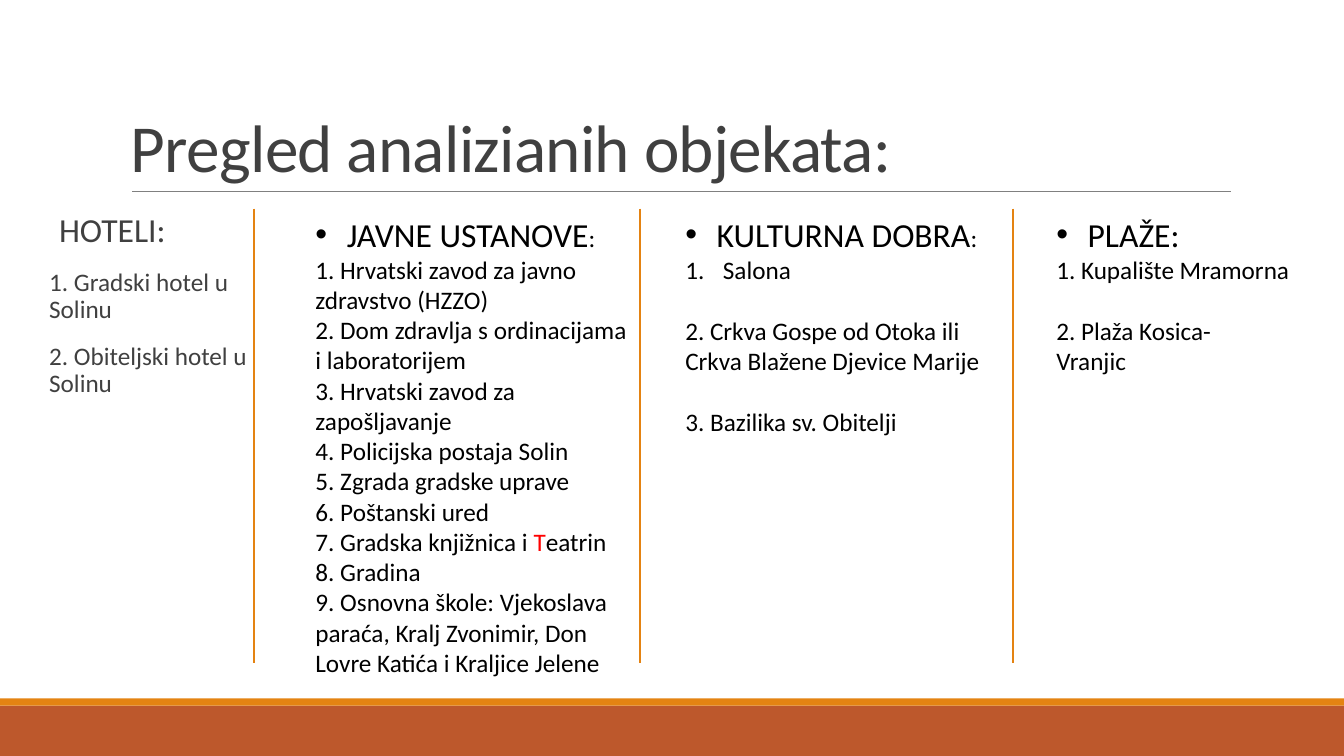
from lxml import etree
from pptx import Presentation
from pptx import util as u
from pptx.dml.color import RGBColor
from pptx.enum import shapes, text
from pptx.oxml.ns import qn

COLORS = {
    "title": "404040",
    "body": "000000",
    "accent": "E48312",
    "footer": "BD582C",
    "rule": "808080",
    "highlight": "FF0000",
}
FONT = "Calibri"
COLUMN_TOP = 5.26
LINE_GAP = 22
BULLET = {"bullet": "•", "indent": 0.79}

PUBLIC_INSTITUTIONS = [
    "1. Hrvatski zavod za javno zdravstvo (HZZO)",
    "2. Dom zdravlja s ordinacijama i laboratorijem",
    "3. Hrvatski zavod za zapošljavanje",
    "4. Policijska postaja Solin",
    "5. Zgrada gradske uprave",
    "6. Poštanski ured",
    [("7. Gradska knjižnica i ", {}), ("T", {"color": "highlight"}), ("eatrin", {})],
    "8. Gradina",
    "9. Osnovna škole: Vjekoslava paraća, Kralj Zvonimir, Don Lovre Katića i Kraljice Jelene",
]


def rgb(name):
    return RGBColor.from_string(COLORS[name])


def add_bar(slide, top, height, color):
    shape = slide.shapes.add_shape(
        shapes.MSO_SHAPE.RECTANGLE, 0, u.Cm(top), u.Cm(33.87), u.Cm(height))
    shape.shadow.inherit = False
    shape.fill.solid()
    shape.fill.fore_color.rgb = rgb(color)
    shape.line.fill.background()


def add_line(slide, x1, y1, x2, y2, color, width):
    line = slide.shapes.add_connector(
        shapes.MSO_CONNECTOR.STRAIGHT, u.Cm(x1), u.Cm(y1), u.Cm(x2), u.Cm(y2))
    line.line.color.rgb = rgb(color)
    line.line.width = u.Pt(width)
    etree.SubElement(line._element.spPr, qn("a:effectLst"))


def add_text_box(slide, left, top, width, height, inset=0.25, anchor="TOP"):
    """Add an empty wrapping box and return its text frame."""
    box = slide.shapes.add_textbox(u.Cm(left), u.Cm(top), u.Cm(width), u.Cm(height))
    frame = box.text_frame
    frame.word_wrap = True
    frame.margin_left = frame.margin_right = u.Cm(inset)
    frame.vertical_anchor = text.MSO_ANCHOR[anchor]
    return frame


def set_bullet(paragraph, bullet, indent):
    """Hang a character bullet, or automatic numbers if bullet is 'number'."""
    properties = paragraph._p.get_or_add_pPr()
    properties.set("marL", str(u.Cm(indent)))
    properties.set("indent", str(-u.Cm(indent)))
    if bullet == "number":
        etree.SubElement(properties, qn("a:buFont"), typeface="+mj-lt")
        etree.SubElement(properties, qn("a:buAutoNum"), type="arabicPeriod")
    else:
        etree.SubElement(properties, qn("a:buFont"), typeface="Arial")
        etree.SubElement(properties, qn("a:buChar"), char=bullet)


def add_run(paragraph, content, size=18, color="body", tracking=None):
    run = paragraph.add_run()
    run.text = content
    run.font.name = FONT
    run.font.size = u.Pt(size)
    run.font.color.rgb = rgb(color)
    if tracking is not None:
        run._r.get_or_add_rPr().set("spc", str(tracking))


def add_text(frame, content, line_spacing=1.0, before=0, after=0,
             bullet=None, indent=0, **run_format):
    """Add a paragraph from a string or from (string, format) runs."""
    first = frame.paragraphs[0]
    paragraph = frame.add_paragraph() if first.runs else first
    paragraph.line_spacing = line_spacing
    paragraph.space_before = u.Pt(before)
    paragraph.space_after = u.Pt(after)
    if bullet:
        set_bullet(paragraph, bullet, indent)
    elif indent:
        paragraph._p.get_or_add_pPr().set("marL", str(u.Cm(indent)))
    runs = [(content, {})] if isinstance(content, str) else content
    for part, part_format in runs:
        for number, row in enumerate(part.split("\n")):
            if number:
                paragraph.add_line_break()
            add_run(paragraph, row, **{**run_format, **part_format})


def add_hotels(slide):
    frame = add_text_box(slide, 1.24, COLUMN_TOP, 5.13, 12.09, inset=0)
    style = {"line_spacing": 0.9, "after": 2, "color": "title"}
    add_text(frame, "HOTELI:", size=24, indent=0.25, **style)
    for hotel in ("1. Gradski hotel u Solinu", "2. Obiteljski hotel u Solinu"):
        add_text(frame, hotel, before=12, **style)


def add_column(slide, left, width, height, heading):
    """Add a column with a bulleted heading and return its text frame."""
    frame = add_text_box(slide, left, COLUMN_TOP, width, height)
    add_text(frame, heading, size=24, **BULLET)
    return frame


def main():
    presentation = Presentation()
    presentation.slide_width, presentation.slide_height = u.Cm(33.87), u.Cm(19.05)
    slide = presentation.slides.add_slide(presentation.slide_layouts[6])

    add_bar(slide, 17.78, 1.27, "footer")
    add_bar(slide, 17.6, 0.18, "accent")
    add_line(slide, 3.33, 4.83, 31.01, 4.83, "rule", 0.5)

    title = add_text_box(slide, 3.05, 0.79, 27.94, 4.04, anchor="BOTTOM")
    add_text(title, "Pregled analizianih objekata:", line_spacing=0.85,
             size=48, color="title", tracking=-50)

    add_hotels(slide)

    small_colon = (":", {"size": 18})
    institutions = add_column(slide, 7.7, 8.43, 12.07,
                              [("JAVNE USTANOVE", {}), small_colon])
    for institution in PUBLIC_INSTITUTIONS:
        add_text(institutions, institution)

    heritage = add_column(slide, 17.02, 8.18, 6.68,
                          [("KULTURNA DOBRA", {}), small_colon])
    add_text(heritage, "Salona", bullet="number", indent=0.95)
    for site in ("2. Crkva Gospe od Otoka ili Crkva Blažene Djevice Marije",
                 "3. Bazilika sv. Obitelji"):
        add_text(heritage, site, before=LINE_GAP)

    beaches = add_column(slide, 26.37, 6.91, 4.37, "PLAŽE:")
    add_text(beaches, "1. Kupalište Mramorna")
    add_text(beaches, "2. Plaža Kosica-\nVranjic", before=LINE_GAP)

    for x in (6.4, 16.13, 25.53):
        add_line(slide, x, COLUMN_TOP, x, 16.71, "accent", 1)

    presentation.save("out.pptx")


if __name__ == "__main__":
    main()
